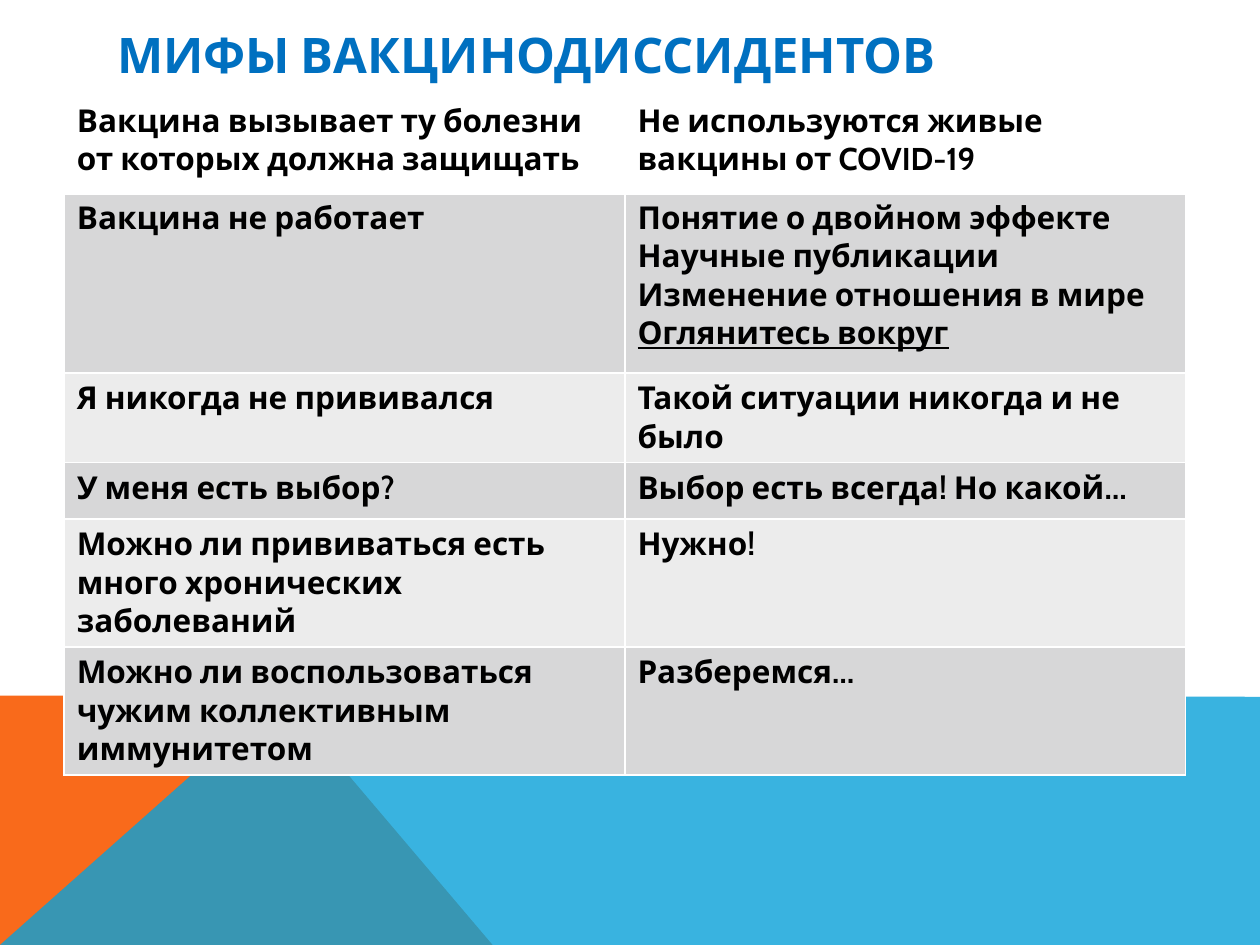
"""Build a slide that sets vaccine myths beside their answers in a table."""
import pptx
import pptx.dml.color
import pptx.enum.text
import pptx.oxml
import pptx.oxml.ns
import pptx.util

Inches = pptx.util.Inches
Pt = pptx.util.Pt
RGB = pptx.dml.color.RGBColor

FONT = "Cabin"
WHITE = RGB(0xFF, 0xFF, 0xFF)
BLACK = RGB(0, 0, 0)
BLUE = RGB(0x00, 0x70, 0xC0)
ORANGE = RGB(0xF9, 0x6A, 0x1B)
SKY = RGB(0x08, 0xA1, 0xD9)
DARK = RGB(0xD7, 0xD7, 0xD8)
LIGHT = RGB(0xEC, 0xEC, 0xEC)

TITLE = "МИФЫ ВАКЦИНОДИССИДЕНТОВ"
ROWS = [
    (0.77, "Вакцина вызывает ту болезни от которых должна защищать",
     ["Не используются живые вакцины от COVID-19"]),
    (1.43, "Вакцина не работает",
     ["Понятие о двойном эффекте", "Научные публикации",
      "Изменение отношения в мире", "Оглянитесь вокруг"]),
    (0.45, "Я никогда не прививался", ["Такой ситуации никогда и не было"]),
    (0.45, "У меня есть выбор?", ["Выбор есть всегда! Но какой…"]),
    (0.77, "Можно ли прививаться есть много хронических заболеваний",
     ["Нужно!"]),
    (0.77, "Можно ли воспользоваться чужим коллективным иммунитетом",
     ["Разберемся…"]),
]
STRESS = "Оглянитесь вокруг"
BANDS = [
    (ORANGE, 100, [(0, 7.5), (0, 5.52), (2.23, 5.52), (3.91, 7.5)]),
    (SKY, 80, [(0, 7.5), (2.23, 5.52), (10, 5.53), (10, 7.5)]),
]


def style(para, size, color):
    font = para.font
    font.name, font.size, font.bold = FONT, Pt(size), True
    font.color.rgb = color


def add_band(slide, color, alpha, points):
    first, *rest = [(Inches(x), Inches(y)) for x, y in points]
    path = slide.shapes.build_freeform(*first)
    path.add_line_segments(rest, close=True)
    band = path.convert_to_shape()
    band.shadow.inherit = False
    band.line.fill.background()
    band.fill.solid()
    band.fill.fore_color.rgb = color
    if alpha < 100:
        tone = band.fill._xPr.find(".//" + pptx.oxml.ns.qn("a:srgbClr"))
        tone.append(pptx.oxml.parse_xml(
            f'<a:alpha {pptx.oxml.ns.nsdecls("a")} val="{alpha * 1000}"/>'))


def add_edges(cell, row):
    thick = {"B": 3 if row == 0 else 1, "T": 3 if row == 1 else 1}
    props = cell._tc.get_or_add_tcPr()
    for side in "LRTB":
        width = Pt(thick.get(side, 1))
        props.append(pptx.oxml.parse_xml(
            f'<a:ln{side} {pptx.oxml.ns.nsdecls("a")} w="{width}">'
            f'<a:solidFill><a:srgbClr val="{WHITE}"/></a:solidFill>'
            f'</a:ln{side}>'))


def fill_cell(cell, row, lines):
    add_edges(cell, row)
    cell.fill.solid()
    cell.fill.fore_color.rgb = (
        WHITE if row == 0 else DARK if row % 2 else LIGHT)
    cell.text = "\n".join(lines)
    for para in cell.text_frame.paragraphs:
        style(para, 18, BLACK)
        if para.text == STRESS:
            para.runs[0].font.underline = True


def add_title(slide):
    title = slide.shapes.title
    title.left, title.top = Inches(0.83), Inches(0.13)
    title.width, title.height = Inches(8.22), Inches(0.6)
    frame = title.text_frame
    frame.text = TITLE
    frame.auto_size = pptx.enum.text.MSO_AUTO_SIZE.NONE
    frame.vertical_anchor = pptx.enum.text.MSO_ANCHOR.MIDDLE
    para = frame.paragraphs[0]
    para.alignment = pptx.enum.text.PP_ALIGN.LEFT
    style(para, 28, BLUE)


def add_myths(slide):
    high = sum(row[0] for row in ROWS)
    table = slide.shapes.add_table(
        len(ROWS), 2, Inches(0.51), Inches(0.76),
        Inches(8.9), Inches(high)).table
    for i, (tall, myth, reply) in enumerate(ROWS):
        table.rows[i].height = Inches(tall)
        for j, lines in enumerate(([myth], reply)):
            fill_cell(table.cell(i, j), i, lines)


def main():
    deck = pptx.Presentation()
    deck.slide_width, deck.slide_height = Inches(10), Inches(7.5)
    slide = deck.slides.add_slide(deck.slide_layouts[5])
    for band in BANDS:
        add_band(slide, *band)
    add_title(slide)
    add_myths(slide)
    deck.save("out.pptx")


if __name__ == "__main__":
    main()
